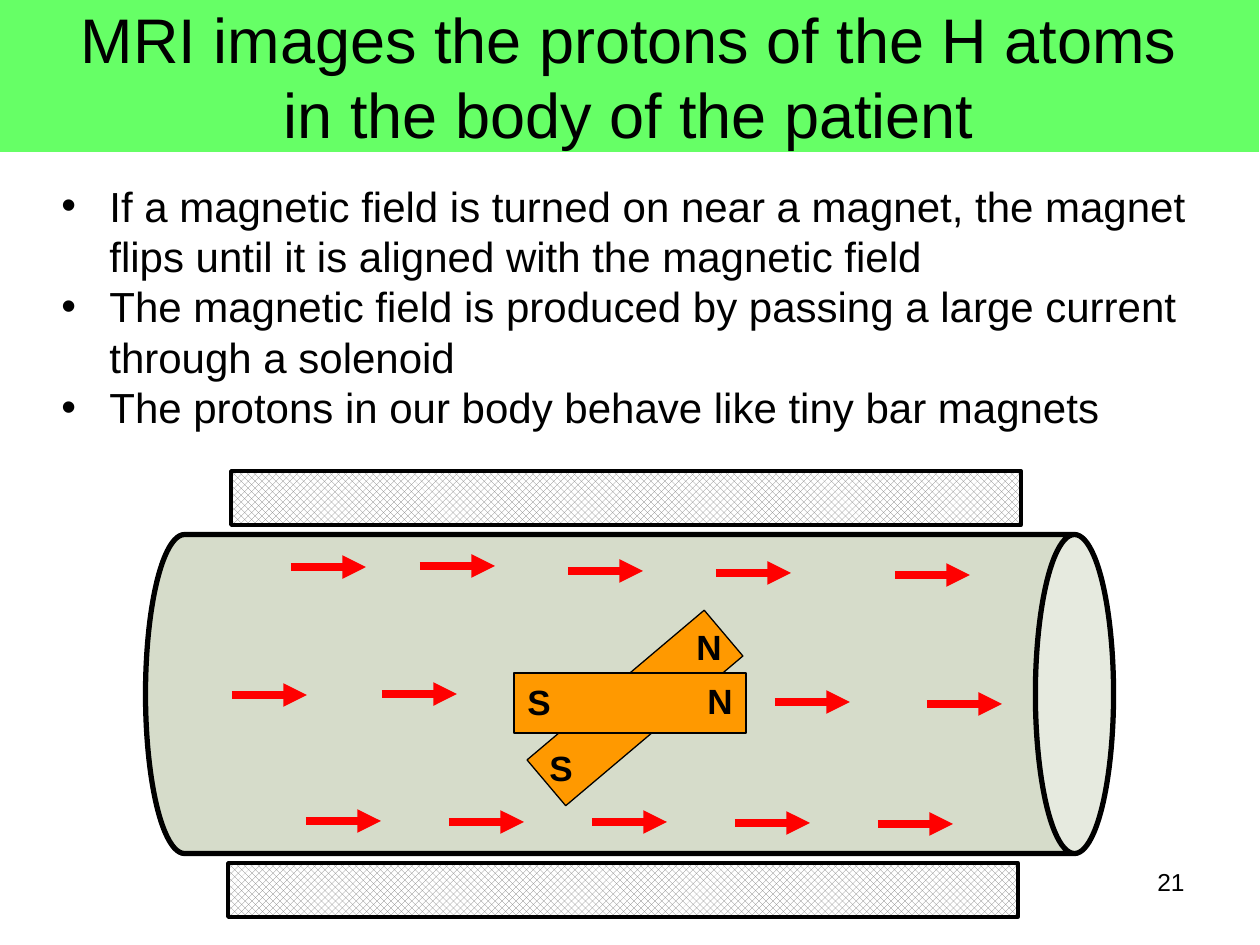
from dataclasses import dataclass

from lxml.etree import SubElement
from pptx import Presentation
from pptx.dml.color import RGBColor
from pptx.enum.dml import MSO_PATTERN as Pattern
from pptx.enum.shapes import MSO_CONNECTOR as Connector, MSO_SHAPE as Shape
from pptx.enum.text import MSO_ANCHOR as Anchor, MSO_AUTO_SIZE as AutoSize, PP_ALIGN as Align
from pptx.oxml.ns import qn
from pptx.util import Pt

# Content (\v is a line break inside a paragraph)
TITLE = "MRI images the protons of the H atoms\vin the body of the patient"
POINTS = [
    "If a magnetic field is turned on near a magnet, the magnet\v"
    "flips until it is aligned with the magnetic field",
    "The magnetic field is produced by passing a large current\vthrough a solenoid",
    "The protons in our body behave like tiny bar magnets",
]
PAGE_NUMBER = "21"

# Layout in px, 126 to the inch
PX = 914400 / 126
SLIDE = (1260, 945)
TITLE_BAR = (-1, 0, 1260, 152)
POINTS_BOX = (49, 174, 1160, 267)
NUMBER_BOX = (903, 861, 294, 66)
CYLINDER = (470, 210, 319, 968)
COILS = [(231, 471, 790, 54), (228, 863, 790, 54)]
POLE_SIZE = (50, 54)
MAGNETS = [  # bar, rotation, poles with their corners
    ((519, 678, 232, 60), 319.8, [("N", 684, 619), ("S", 537, 740)]),
    ((514, 673, 232, 60), 0, [("N", 695, 673), ("S", 515, 674)]),
]
ARROW_LENGTH = 75
FIELD_ARROWS = [
    [(291, 567), (420, 566), (568, 571), (716, 573), (895, 575)],
    [(232, 695), (382, 694), (775, 702), (927, 704)],
    [(306 + 143 * i, 821 + round(0.7 * i)) for i in range(5)],
]
HANGING = 48


@dataclass(frozen=True)
class Theme:
    font: str = "Arial"
    ink: str = "000000"
    title_bar: str = "66FF66"
    cylinder: str = "D6DCCA"
    magnet: str = "FF9900"
    field: str = "FF0000"
    coil: str = "808080"
    paper: str = "FFFFFF"
    title_size: int = 36
    point_size: int = 24
    pole_size: int = 20
    number_size: int = 14


theme = Theme()


def emu(*lengths):
    return [round(length * PX) for length in lengths]


def rgb(code):
    return RGBColor.from_string(code)


def add_figure(slide, kind, box, fill=None, line_width=None):
    figure = slide.shapes.add_shape(kind, *emu(*box))
    figure.shadow.inherit = False
    if fill:
        figure.fill.solid()
        figure.fill.fore_color.rgb = rgb(fill)
    if line_width:
        figure.line.color.rgb = rgb(theme.ink)
        figure.line.width = Pt(line_width)
    else:
        figure.line.fill.background()
    return figure


def write(paragraph, text, size, bold=False, align=Align.LEFT):
    paragraph.alignment = align
    for i, line in enumerate(text.split("\v")):
        if i:
            paragraph.add_line_break()
        run = paragraph.add_run()
        run.text = line
        run.font.name = theme.font
        run.font.size = Pt(size)
        run.font.bold = bold
        run.font.color.rgb = rgb(theme.ink)


def add_text_frame(slide, box, wrap):
    frame = slide.shapes.add_textbox(*emu(*box)).text_frame
    frame.word_wrap = wrap
    if not wrap:
        frame.auto_size = AutoSize.SHAPE_TO_FIT_TEXT
    return frame


def add_bullet(paragraph):
    properties = paragraph._p.get_or_add_pPr()
    indent, = emu(HANGING)
    properties.set("marL", str(indent))
    properties.set("indent", str(-indent))
    SubElement(properties, qn("a:buFont"), typeface=theme.font)
    SubElement(properties, qn("a:buChar"), char="•")


def add_field_arrow(slide, x, y):
    arrow = slide.shapes.add_connector(Connector.STRAIGHT, *emu(x, y, x + ARROW_LENGTH, y))
    arrow.line.color.rgb = rgb(theme.field)
    arrow.line.width = Pt(4.5)
    SubElement(arrow.line._get_or_add_ln(), qn("a:tailEnd"), type="triangle")
    SubElement(arrow._element.spPr, qn("a:effectLst"))


def main():
    deck = Presentation()
    deck.slide_width, deck.slide_height = emu(*SLIDE)
    slide = deck.slides.add_slide(deck.slide_layouts[6])

    # Scanner: cylinder between two coils
    cylinder = add_figure(slide, Shape.CAN, CYLINDER, theme.cylinder, 3)
    cylinder.rotation = 90
    cylinder.adjustments[0] = 0.245
    for box in COILS:
        coil = add_figure(slide, Shape.RECTANGLE, box, line_width=2)
        coil.fill.patterned()
        coil.fill.pattern = Pattern.LARGE_CHECKER_BOARD
        coil.fill.fore_color.rgb = rgb(theme.coil)
        coil.fill.back_color.rgb = rgb(theme.paper)

    # Title bar
    title = add_figure(slide, Shape.RECTANGLE, TITLE_BAR, theme.title_bar).text_frame
    title.word_wrap = True
    title.vertical_anchor = Anchor.MIDDLE
    write(title.paragraphs[0], TITLE, theme.title_size, align=Align.CENTER)

    # Bar magnets, tilted and aligned
    for box, angle, poles in MAGNETS:
        bar = add_figure(slide, Shape.RECTANGLE, box, theme.magnet, 0.75)
        bar.rotation = angle
        for pole, x, y in poles:
            label = add_text_frame(slide, (x, y, *POLE_SIZE), wrap=False)
            write(label.paragraphs[0], pole, theme.pole_size, bold=True)

    # Page number
    number = add_text_frame(slide, NUMBER_BOX, wrap=True)
    write(number.paragraphs[0], PAGE_NUMBER, theme.number_size, align=Align.RIGHT)

    # Bullet points
    points = add_text_frame(slide, POINTS_BOX, wrap=False)
    for i, point in enumerate(POINTS):
        paragraph = points.add_paragraph() if i else points.paragraphs[0]
        write(paragraph, point, theme.point_size)
        add_bullet(paragraph)

    # Magnetic field
    for row in FIELD_ARROWS:
        for x, y in row:
            add_field_arrow(slide, x, y)

    deck.save("out.pptx")


if __name__ == "__main__":
    main()
